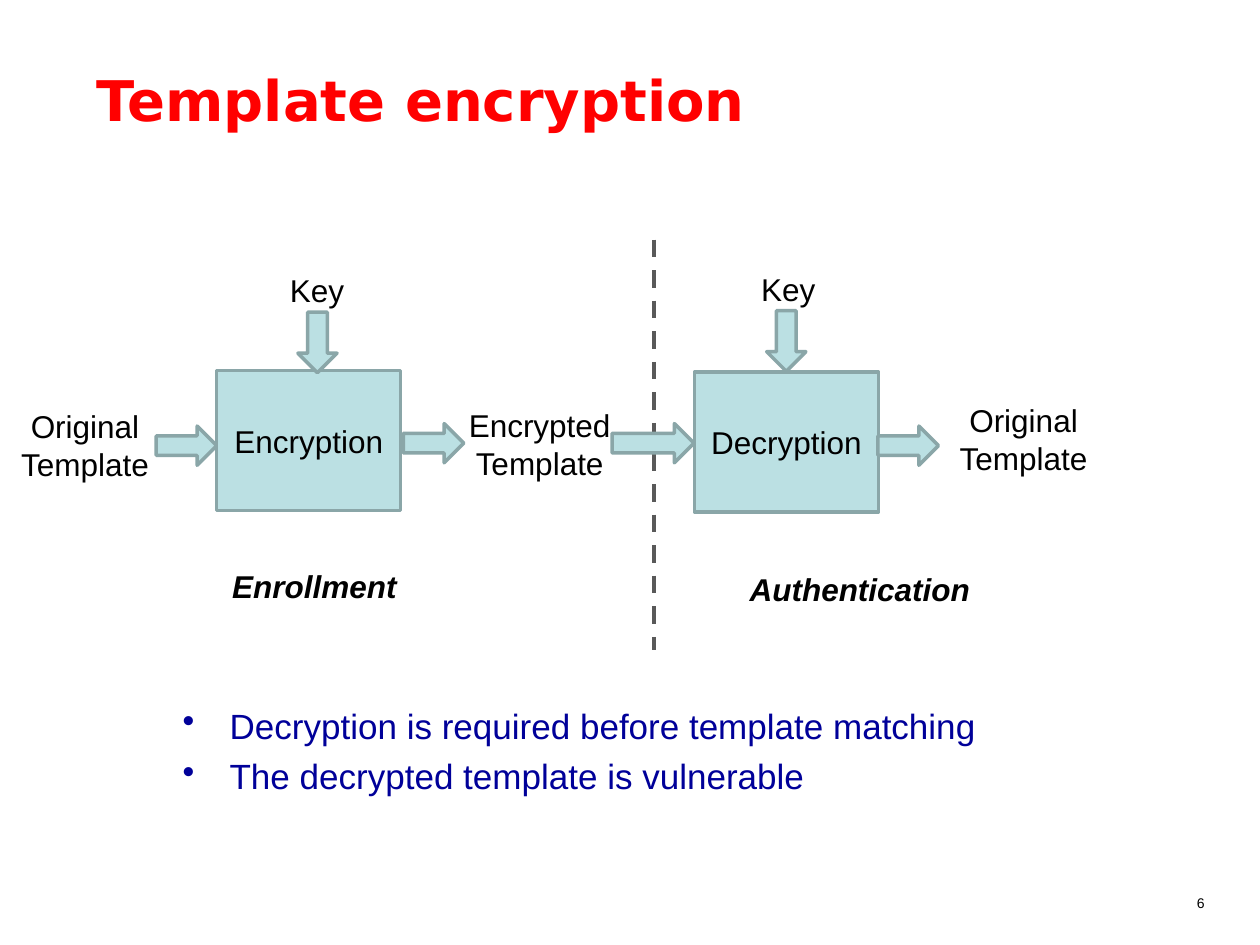
import pptx
import pptx.dml.color
import pptx.enum.dml
import pptx.enum.shapes
import pptx.enum.text
import pptx.oxml
import pptx.oxml.ns
import pptx.util
from lxml import etree

Cm = pptx.util.Cm
Pt = pptx.util.Pt
Shapes = pptx.enum.shapes.MSO_SHAPE
Align = pptx.enum.text.PP_ALIGN
Anchor = pptx.enum.text.MSO_ANCHOR

COLORS = {"fill": "BBE0E3", "outline": "8AA6A8", "divider": "595959",
          "title": "FF0000", "bullet": "000099", "text": "000000"}
LABEL = {"name": "Arial", "size": Pt(18)}
CAPTION = {**LABEL, "bold": True, "italic": True}
TITLE = {"name": "DejaVu Sans", "size": Pt(32), "bold": True}
BULLET = {"name": "Arial", "size": Pt(20)}
NUMBER = {"name": "Arial", "size": Pt(8)}
ARROW_HEIGHT = 0.79
LABEL_HEIGHT = 1.63

ENROLLMENT = {
    "block": ("Encryption", 4.37, 2.64),
    "labels": [("Original Template", 0, 3.33, 3.43),
               ("Key", 4.83, 0.2, 3.12),
               ("Encrypted\nTemplate", 8.81, 3.3, 4.14)],
    "caption": ("Enrollment", 4.32, 6.17, 4.04),
    "arrows": [(3.15, 3.76, 1.22, 0), (8.13, 3.71, 1.22, 0), (5.79, 1.68, 1.22, 90)],
}
AUTHENTICATION = {
    "block": ("Decryption", 0.82, 2.67),
    "labels": [("Original Template", 5.74, 3.2, 3.43),
               ("Key", 1.15, 0.18, 3.12)],
    "caption": ("Authentication", 1.55, 6.22, 5.21),
    "arrows": [(-0.84, 3.71, 1.65, 0), (4.52, 3.76, 1.22, 0), (2.06, 1.65, 1.22, 90)],
}


def rgb(name):
    return pptx.dml.color.RGBColor.from_string(COLORS[name])


def set_font(font, values, color):
    for key, value in values.items():
        setattr(font, key, value)
    font.color.rgb = rgb(color)


def write_text(shape, text, values, color="text", align=Align.CENTER, anchor=Anchor.MIDDLE):
    frame = shape.text_frame
    frame.word_wrap = True
    frame.vertical_anchor = anchor
    frame.text = text
    for paragraph in frame.paragraphs:
        paragraph.alignment = align
        set_font(paragraph.font, values, color)
    return frame


def add_text(slide, box, text, values, **options):
    shape = slide.shapes.add_textbox(*map(Cm, box))
    return write_text(shape, text, values, **options)


def add_filled_shape(slide, kind, box):
    shape = slide.shapes.add_shape(kind, *map(Cm, box))
    shape.shadow.inherit = False
    shape.fill.solid()
    shape.fill.fore_color.rgb = rgb("fill")
    shape.line.color.rgb = rgb("outline")
    shape.line.width = Pt(2)
    return shape


def add_stage(slide, box, stage):
    left, top = box[:2]
    text, x, y = stage["block"]
    block = add_filled_shape(slide, Shapes.RECTANGLE, (left + x, top + y, 3.71, 2.82))
    write_text(block, text, LABEL)
    labels = [(label, LABEL) for label in stage["labels"]] + [(stage["caption"], CAPTION)]
    for (text, x, y, width), values in labels:
        add_text(slide, (left + x, top + y, width, LABEL_HEIGHT), text, values)
    for x, y, width, rotation in stage["arrows"]:
        arrow = add_filled_shape(slide, Shapes.RIGHT_ARROW,
                                 (left + x, top + y, width, ARROW_HEIGHT))
        arrow.rotation = rotation


def add_divider(slide, box):
    left, top, width, height = box
    divider = slide.shapes.add_connector(pptx.enum.shapes.MSO_CONNECTOR.STRAIGHT,
                                         Cm(left), Cm(top), Cm(left + width), Cm(top + height))
    divider.line.color.rgb = rgb("divider")
    divider.line.width = Pt(2.5)
    divider.line.dash_style = pptx.enum.dml.MSO_LINE.DASH
    properties = divider.element.find(pptx.oxml.ns.qn("p:spPr"))
    etree.SubElement(properties, pptx.oxml.ns.qn("a:effectLst"))


def add_bullets(slide, box, lines):
    frame = slide.shapes.add_textbox(*map(Cm, box)).text_frame
    frame.word_wrap = True
    frame.text = "\n".join(lines)
    for index, paragraph in enumerate(frame.paragraphs):
        properties = paragraph._p.get_or_add_pPr()
        properties.set("marL", str(Cm(0.95)))
        properties.set("indent", str(-Cm(0.95)))
        if index:
            paragraph.space_before = Pt(5)
        bullet = etree.SubElement(properties, pptx.oxml.ns.qn("a:buChar"))
        bullet.set("char", "•")
        set_font(paragraph.font, BULLET, "bullet")


def main():
    presentation = pptx.Presentation()
    presentation.slide_width = Cm(25.4)
    presentation.slide_height = Cm(19.05)
    slide = presentation.slides.add_slide(presentation.slide_layouts[6])
    add_text(slide, (1.7, 1.19, 22.86, 3.18), "Template encryption", TITLE,
             color="title", align=Align.LEFT, anchor=Anchor.TOP)
    add_divider(slide, (13.18, 4.83, 0, 8.28))
    add_stage(slide, (0, 4.83, 13.18, 8.28), ENROLLMENT)
    add_stage(slide, (13.18, 4.83, 12.22, 8.28), AUTHENTICATION)
    add_bullets(slide, (3.43, 14.07, 19.81, 3.2),
                ["Decryption is required before template matching",
                 "The decrypted template is vulnerable"])
    add_text(slide, (23.62, 17.91, 1.17, 0.58), "6", NUMBER, anchor=Anchor.TOP)
    presentation.save("out.pptx")


if __name__ == "__main__":
    main()
